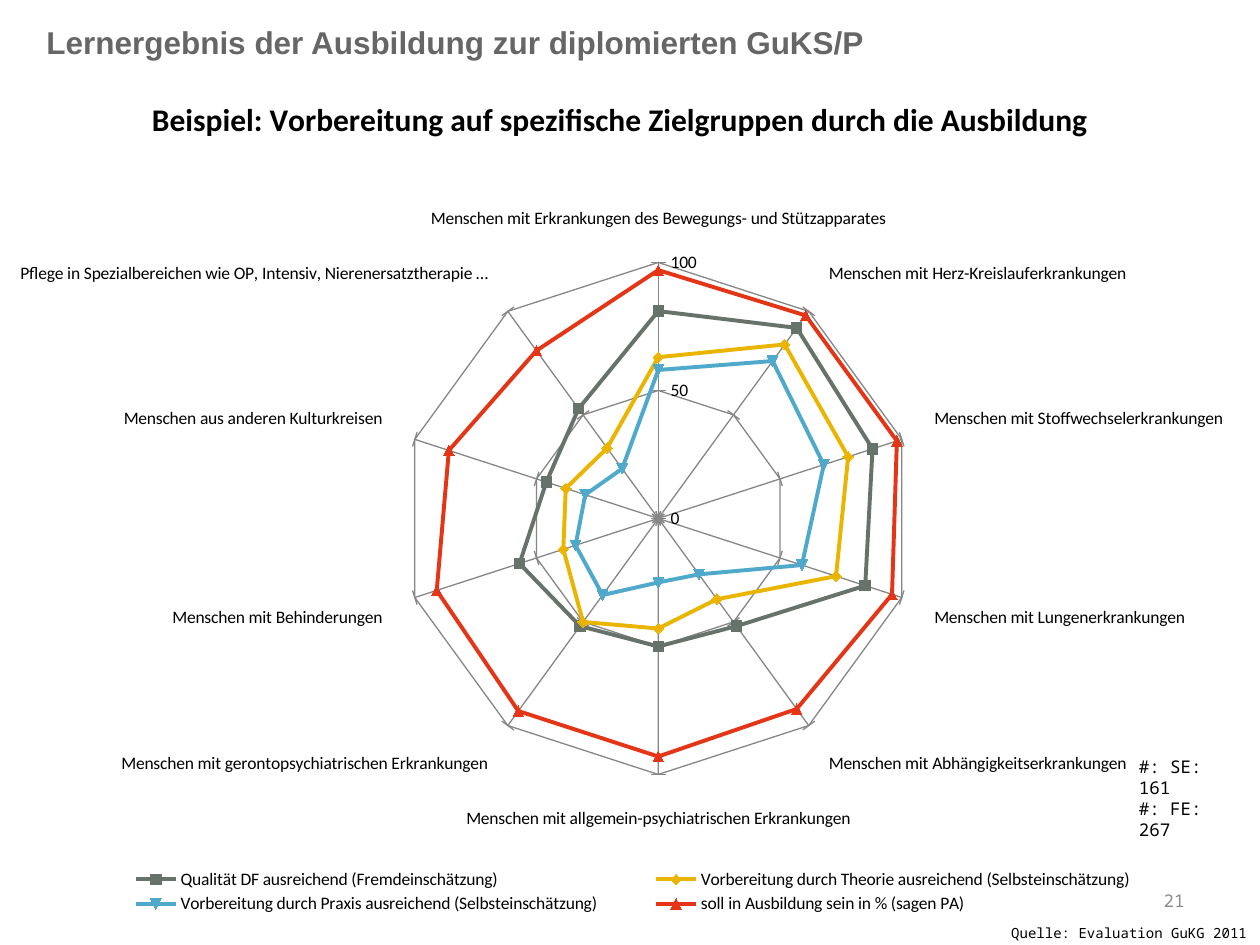
from lxml import etree
from pptx import Presentation
from pptx import util as u
from pptx.chart.data import CategoryChartData
from pptx.dml.color import RGBColor
from pptx.enum import chart as charts, text
from pptx.oxml.ns import qn

WIDTH, HEIGHT = 10, 7.5
MONO = "Noto Sans Mono"
GRID_GREY = "868686"

TARGET_GROUPS = [
    "Menschen mit Erkrankungen des Bewegungs- und Stützapparates",
    "Menschen mit Herz-Kreislauferkrankungen",
    "Menschen mit Stoffwechselerkrankungen",
    "Menschen mit Lungenerkrankungen",
    "Menschen mit Abhängigkeitserkrankungen",
    "Menschen mit allgemein-psychiatrischen Erkrankungen",
    "Menschen mit gerontopsychiatrischen Erkrankungen",
    "Menschen mit Behinderungen",
    "Menschen aus anderen Kulturkreisen",
    "Pflege in Spezialbereichen wie OP, Intensiv, Nierenersatztherapie …",
]
RATINGS = [
    ("Qualität DF ausreichend (Fremdeinschätzung)", "67726B",
     [81, 92, 88, 85, 52, 50, 52, 57, 46, 53]),
    ("Vorbereitung durch Theorie ausreichend (Selbsteinschätzung)", "E9B500",
     [63, 84, 78, 73, 39, 43, 50, 39, 38, 34]),
    ("Vorbereitung durch Praxis ausreichend (Selbsteinschätzung)", "4FA9CB",
     [58, 76, 68, 59, 27, 25, 37, 34, 30, 24]),
    ("soll in Ausbildung sein in % (sagen PA)", "E53517",
     [97, 98, 98, 96, 92, 93, 93, 91, 86, 81]),
]


def color(hex_value):
    return RGBColor.from_string(hex_value)


def style(font, name, size, hex_value, bold=False):
    font.name, font.size, font.bold = name, u.Pt(size), bold
    font.color.rgb = color(hex_value)


def style_line(line, hex_value, width):
    line.color.rgb = color(hex_value)
    line.width = u.Pt(width)


def add_label(slide, box, wording, name, size, hex_value, bold=False,
              align=text.PP_ALIGN.LEFT, anchor=text.MSO_ANCHOR.TOP):
    frame = slide.shapes.add_textbox(*map(u.Inches, box)).text_frame
    frame.word_wrap = True
    frame.vertical_anchor = anchor
    frame.text = wording
    for paragraph in frame.paragraphs:
        paragraph.alignment = align
        for run in paragraph.runs:
            style(run.font, name, size, hex_value, bold)


def place(part, index, **shares):
    for old in part.findall(qn("c:layout")):
        part.remove(old)
    layout = etree.Element(qn("c:layout"))
    part.insert(index, layout)
    manual = etree.SubElement(layout, qn("c:manualLayout"))
    if index == 0:
        etree.SubElement(manual, qn("c:layoutTarget"), val="inner")
    for edge in ("xMode", "yMode"):
        etree.SubElement(manual, qn("c:" + edge), val="edge")
    for key, share in shares.items():
        etree.SubElement(manual, qn("c:" + key), val=str(share))


def style_axes(radar):
    values, groups = radar.value_axis, radar.category_axis
    values.minimum_scale, values.maximum_scale = 0, 100
    values.major_unit = 50
    for axis in (values, groups):
        axis.has_major_gridlines = True
        axis.major_tick_mark = charts.XL_TICK_MARK.CROSS
        style_line(axis.major_gridlines.format.line, GRID_GREY, 0.75)
        style_line(axis.format.line, GRID_GREY, 0.75)
        style(axis.tick_labels.font, "Calibri", 10, "000000")


def add_radar(slide):
    data = CategoryChartData(number_format="General")
    data.categories = TARGET_GROUPS
    for name, _, scores in RATINGS:
        data.add_series(name, scores)
    box = map(u.Inches, (-0.16, 0.45, 10.16, 7.05))
    radar = slide.shapes.add_chart(
        charts.XL_CHART_TYPE.RADAR_MARKERS, *box, data).chart
    style(radar.font, "Calibri", 10, "000000")

    radar.has_title = True
    heading = radar.chart_title.text_frame
    heading.text = ("Beispiel: Vorbereitung auf spezifische Zielgruppen "
                    "durch die Ausbildung")
    style(heading.paragraphs[0].runs[0].font, "Calibri", 18, "000000", True)

    radar.has_legend = True
    legend = radar.legend
    legend.position = charts.XL_LEGEND_POSITION.BOTTOM
    legend.include_in_layout = False
    style(legend.font, "Calibri", 10, "000000")

    style_axes(radar)
    for series, (_, hue, _) in zip(radar.plots[0].series, RATINGS):
        style_line(series.format.line, hue, 2.25)
        series.marker.size = 6
        series.marker.format.fill.solid()
        series.marker.format.fill.fore_color.rgb = color(hue)
        style_line(series.marker.format.line, hue, 0.75)

    root = radar.element
    place(root.find(".//" + qn("c:plotArea")), 0, x=0.33, y=0.23, w=0.4, h=0.58)
    place(root.find(".//" + qn("c:title")), 1, x=0.13, y=0.04)
    place(root.find(".//" + qn("c:legend")), 1, x=0.08, y=0.91, w=0.86, h=0.06)


def main():
    deck = Presentation()
    deck.slide_width, deck.slide_height = u.Inches(WIDTH), u.Inches(HEIGHT)
    slide = deck.slides.add_slide(deck.slide_layouts[6])
    right = text.PP_ALIGN.RIGHT

    add_radar(slide)
    add_label(slide, (8.94, 5.95, 0.89, 0.44), "#: SE: 161\n#: FE: 267",
              MONO, 10, "000000")
    add_label(slide, (7.17, 6.95, 2.33, 0.4), "21", MONO, 10, "8C8C8C",
              align=right, anchor=text.MSO_ANCHOR.MIDDLE)
    add_label(slide, (0.27, 0.13, 7.09, 0.4),
              "Lernergebnis der Ausbildung zur diplomierten GuKS/P",
              "Arial", 18, "666666", bold=True)
    add_label(slide, (7.8, 7.29, 2.2, 0.24), "Quelle: Evaluation GuKG 2011",
              MONO, 8, "000000", align=right)
    deck.save("out.pptx")


if __name__ == "__main__":
    main()
